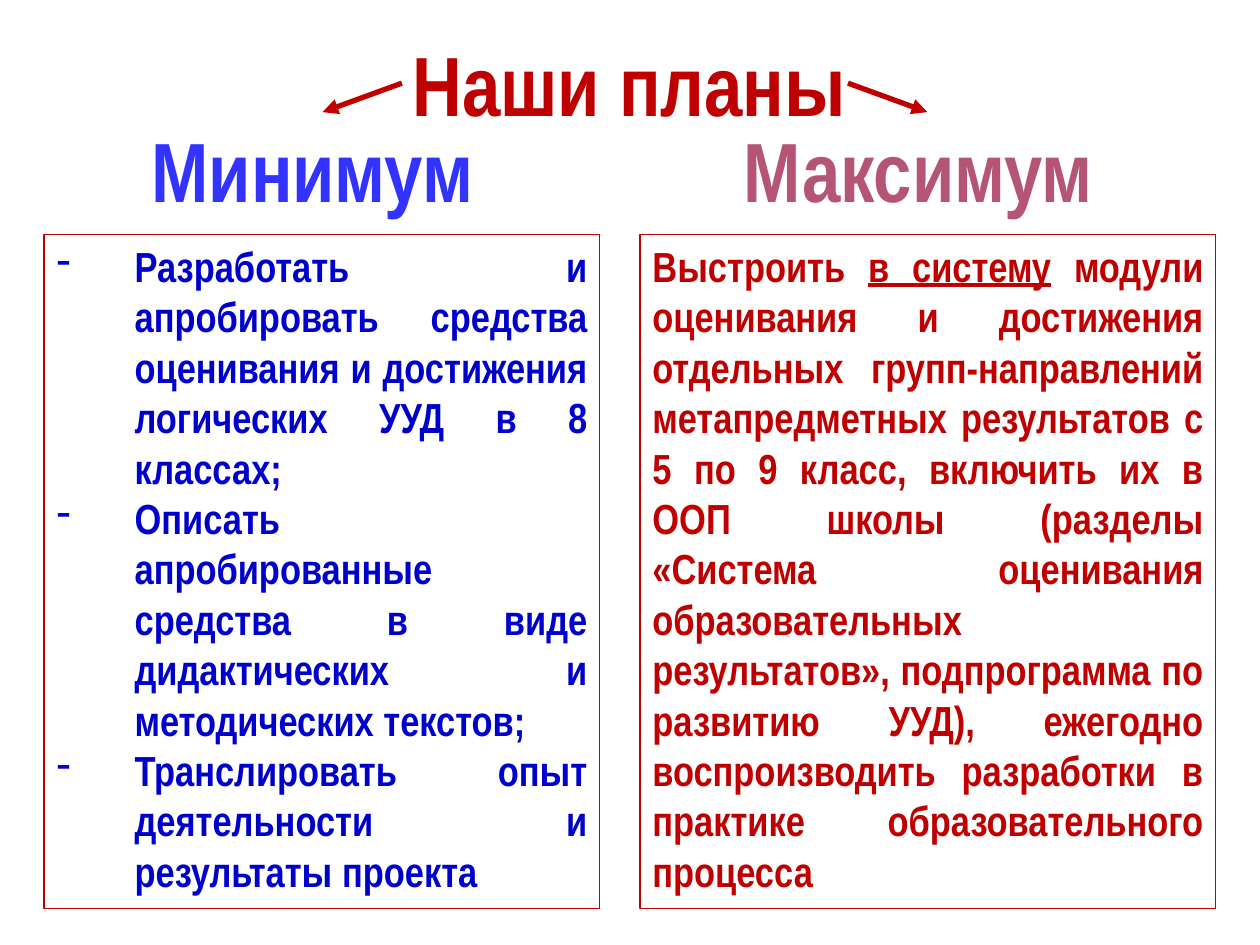
from pptx import Presentation
from pptx.dml.color import RGBColor
from pptx.enum.shapes import MSO_CONNECTOR as Connector, MSO_SHAPE as Shape
from pptx.enum.text import MSO_ANCHOR as Anchor, MSO_AUTO_SIZE as AutoSize, PP_ALIGN as Align
from pptx.oxml.ns import qn
from pptx.util import Inches, Pt
from lxml.etree import SubElement

RED = RGBColor(0xC0, 0x00, 0x00)
DARK_BLUE = RGBColor(0x00, 0x00, 0xCC)
BLUE = RGBColor(0x33, 0x33, 0xFF)
PINK = RGBColor(0xB5, 0x54, 0x75)
FONT = "Arial Narrow"

MINIMUM_PLANS = [
    ["Разработать и апробировать средства оценивания и достижения логических УУД в 8 классах; "],
    ["Описать апробированные средства в виде дидактических и методических текстов;"],
    ["Транслировать опыт деятельности и результаты проекта"],
]
UNDERLINED = "в систему"
MAXIMUM_PLANS = [[
    "Выстроить ",
    UNDERLINED,
    " модули оценивания и достижения отдельных групп-направлений метапредметных "
    "результатов с 5 по 9 класс, включить их в ООП школы (разделы «Система оценивания "
    "образовательных результатов», подпрограмма по развитию УУД), ежегодно воспроизводить "
    "разработки в практике образовательного процесса",
]]


def add_dash(paragraph):
    properties = paragraph._p.get_or_add_pPr()
    properties.set("marL", str(Inches(0.62)))
    properties.set("indent", str(-Inches(0.62)))
    SubElement(properties, qn("a:buFontTx"))
    SubElement(properties, qn("a:buChar"), char="-")


def write_text(frame, paragraphs, size, color, align, dashed=False, wrap=True):
    frame.word_wrap = wrap
    frame.auto_size = AutoSize.SHAPE_TO_FIT_TEXT
    frame.vertical_anchor = Anchor.TOP
    for index, pieces in enumerate(paragraphs):
        paragraph = frame.add_paragraph() if index else frame.paragraphs[0]
        paragraph.alignment = align
        if dashed:
            add_dash(paragraph)
        for piece in pieces:
            run = paragraph.add_run()
            run.text = piece
            run.font.name = FONT
            run.font.size = Pt(size)
            run.font.bold = True
            run.font.color.rgb = color
            if piece == UNDERLINED:
                run.font.underline = True


def add_heading(slide, text, left, top, width, color, wrap=False):
    box = slide.shapes.add_textbox(Inches(left), Inches(top), Inches(width), Inches(0.91))
    write_text(box.text_frame, [[text]], size=48, color=color, align=Align.CENTER, wrap=wrap)


def add_panel(slide, paragraphs, left, width, color, dashed=False):
    panel = slide.shapes.add_shape(
        Shape.RECTANGLE, Inches(left), Inches(1.86), Inches(width), Inches(5.35))
    panel.shadow.inherit = False
    panel.fill.background()
    panel.line.color.rgb = RED
    panel.line.width = Pt(0.75)
    write_text(panel.text_frame, paragraphs, size=24, color=color,
               align=Align.JUSTIFY, dashed=dashed)


def add_arrow(slide, start_x, end_x):
    arrow = slide.shapes.add_connector(
        Connector.STRAIGHT, Inches(start_x), Inches(0.66), Inches(end_x), Inches(0.89))
    arrow.line.color.rgb = RED
    arrow.line.width = Pt(3)
    SubElement(arrow.line._get_or_add_ln(), qn("a:tailEnd"), type="triangle")
    SubElement(arrow._element.spPr, qn("a:effectLst"))


def main():
    presentation = Presentation()
    presentation.slide_width = Inches(10)
    presentation.slide_height = Inches(7.5)
    slide = presentation.slides.add_slide(presentation.slide_layouts[6])

    add_panel(slide, MINIMUM_PLANS, left=0.35, width=4.41, color=DARK_BLUE, dashed=True)
    add_panel(slide, MAXIMUM_PLANS, left=5.08, width=4.57, color=RED)
    add_heading(slide, "Минимум ", left=1.08, top=0.89, width=2.95, color=BLUE)
    add_heading(slide, "Максимум ", left=5.78, top=0.89, width=3.17, color=PINK)
    add_heading(slide, "Наши планы", left=0.35, top=0.21, width=9.29, color=RED, wrap=True)
    add_arrow(slide, start_x=3.19, end_x=2.56)
    add_arrow(slide, start_x=6.73, end_x=7.36)

    presentation.save("out.pptx")


if __name__ == "__main__":
    main()
